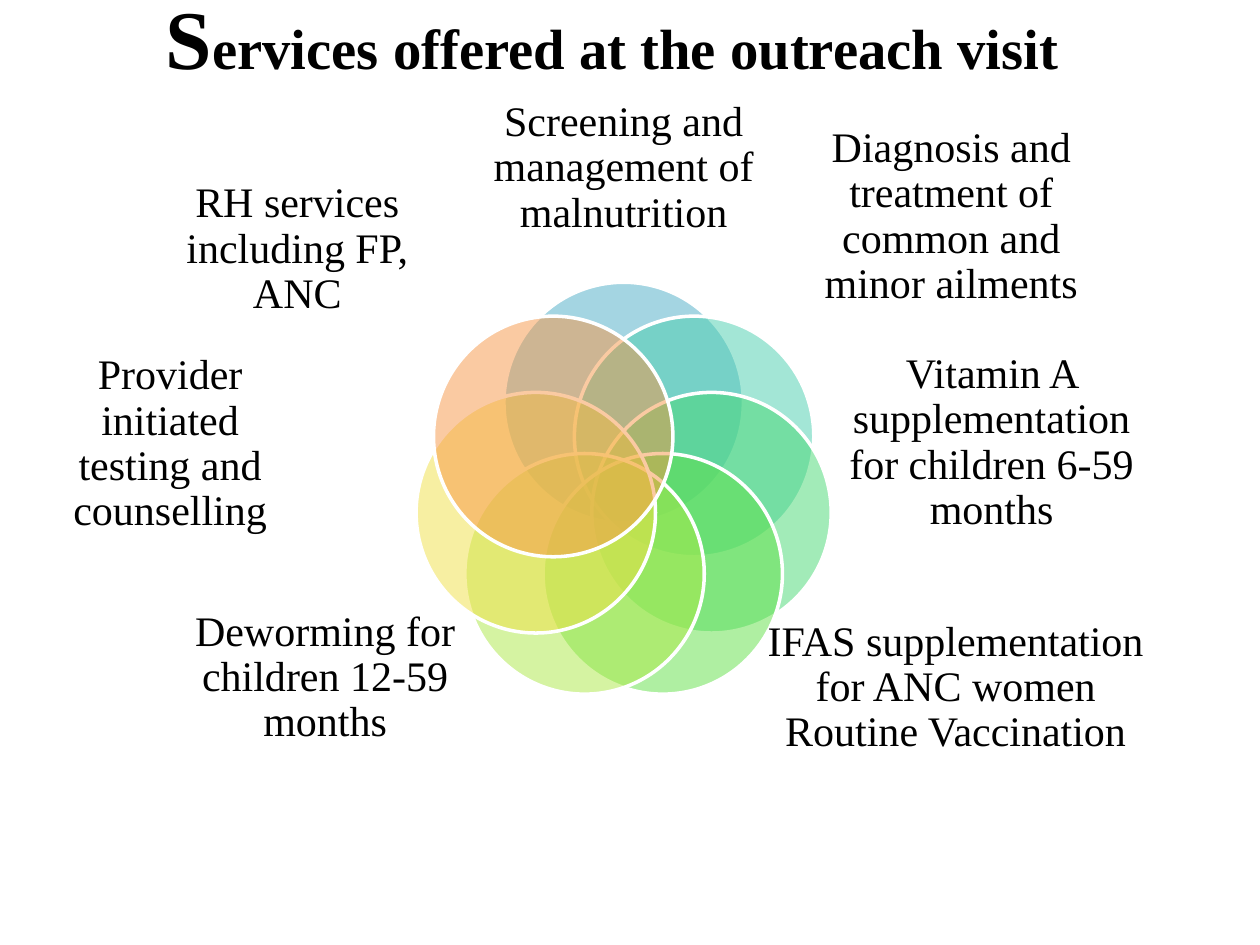
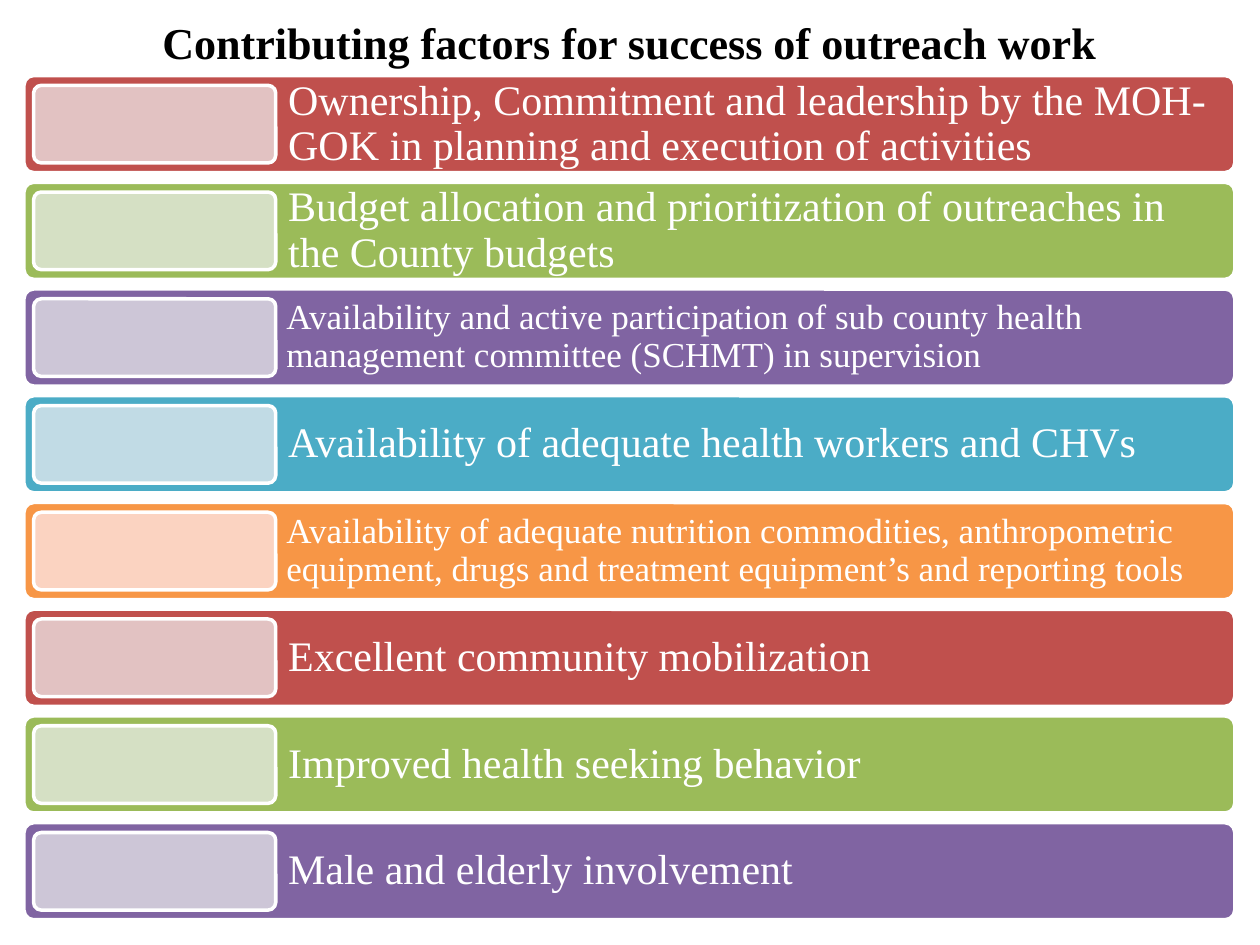
import math
from dataclasses import dataclass
from itertools import cycle

from lxml import etree
from pptx import Presentation
from pptx import util as u
from pptx.dml.color import RGBColor
from pptx.enum import shapes, text
from pptx.oxml.ns import qn


@dataclass(frozen=True)
class Theme:
    font: str = "Times New Roman"
    ink: str = "000000"
    paper: str = "FFFFFF"
    initial: float = 47.7
    heading: float = 32.4
    subheading: float = 25.2
    body: float = 24
    small: float = 20
    outline: float = 2
    opacity: int = 50
    bands: tuple = (
        ("C0504D", "E2C2C2"),
        ("9BBB59", "D5E0C4"),
        ("8064A2", "CDC6D7"),
        ("4BACC6", "C1DBE5"),
        ("F79646", "FBD3C1"),
    )


THEME = Theme()
WIDTH, HEIGHT = 10, 7.5

SERVICES_TITLE = [("S", THEME.initial), ("ervices offered at the outreach visit", THEME.heading)]
SERVICES = [
    ("Screening and management of malnutrition", "4BACC6", (3.86, 0.75, 2.18, 1.17)),
    ("Diagnosis and treatment of common and minor ailments", "49CFAE", (6.52, 1.08, 2.06, 1.28)),
    ("Vitamin A supplementation for children 6-59 months", "47D872", (6.57, 2.83, 2.6, 1.37)),
    ("IFAS supplementation for ANC women\nRoutine Vaccination", "60E146", (5.98, 4.83, 3.21, 1.26)),
    ("Deworming for children 12-59 months", "ACE946", (1.49, 4.75, 2.18, 1.26)),
    ("Provider initiated testing and counselling", "F0E146", (0.34, 2.84, 2.02, 1.37)),
    ("RH services including FP, ANC", "F79646", (1.33, 1.34, 2.06, 1.28)),
]

FACTORS_TITLE = [("Contributing factors for success of outreach work", THEME.subheading)]
FACTORS = [
    ("Ownership, Commitment and leadership by the MOH-GOK in planning and execution of activities", THEME.body),
    ("Budget allocation and prioritization of outreaches in the County budgets", THEME.body),
    ("Availability and active participation of sub county health management committee (SCHMT) in supervision",
     THEME.small),
    ("Availability of adequate health workers and CHVs", THEME.body),
    ("Availability of adequate nutrition commodities, anthropometric equipment, drugs and treatment "
     "equipment’s and reporting tools", THEME.small),
    ("Excellent community mobilization", THEME.body),
    ("Improved health seeking behavior", THEME.body),
    ("Male and elderly involvement", THEME.body),
]


def inches(place):
    return [u.Inches(length) for length in place]


def add_text(page, spans, place, color=THEME.ink, bold=False,
             align=text.PP_ALIGN.CENTER, spacing=0.9, inset=0):
    box = page.shapes.add_textbox(*inches(place))
    frame = box.text_frame
    frame.word_wrap = True
    frame.vertical_anchor = text.MSO_ANCHOR.MIDDLE
    frame.margin_left = frame.margin_right = u.Inches(inset)
    frame.margin_top = frame.margin_bottom = 0
    para = frame.paragraphs[0]
    para.alignment = align
    para.line_spacing = spacing
    for words, size in spans:
        for number, line in enumerate(words.split("\n")):
            if number:
                para.add_line_break()
            span = para.add_run()
            span.text = line
            span.font.name = THEME.font
            span.font.size = u.Pt(size)
            span.font.bold = bold
            span.font.color.rgb = RGBColor.from_string(color)


def add_panel(page, kind, place, fill, opacity=100):
    panel = page.shapes.add_shape(kind, *inches(place))
    panel.shadow.inherit = False
    panel.fill.solid()
    panel.fill.fore_color.rgb = RGBColor.from_string(fill)
    panel.line.color.rgb = RGBColor.from_string(THEME.paper)
    panel.line.width = u.Pt(THEME.outline)
    if opacity < 100:
        color = panel.fill._xPr.find(qn("a:solidFill"))[0]
        etree.SubElement(color, qn("a:alpha")).set("val", str(opacity * 1000))
    return panel


def add_page(deck, title, place):
    page = deck.slides.add_slide(deck.slide_layouts[6])
    add_text(page, title, place, bold=True, spacing=1)
    return page


def add_services(deck):
    page = add_page(deck, SERVICES_TITLE, (0.37, 0.04, 8.98, 0.5))
    center_x, center_y, ring = 4.95, 3.91, 0.715
    wide, high = 1.9, 1.91
    for index, (label, fill, label_place) in enumerate(SERVICES):
        angle = math.tau * index / len(SERVICES)
        left = center_x + ring * math.sin(angle) - wide / 2
        top = center_y - ring * math.cos(angle) - high / 2
        add_panel(page, shapes.MSO_SHAPE.OVAL, (left, top, wide, high), fill, THEME.opacity)
        add_text(page, [(label, THEME.body)], label_place)


def add_factors(deck):
    left, top = 0.19, 0.6
    wide = WIDTH - 2 * left - 0.01
    page = add_page(deck, FACTORS_TITLE, (left, 0.08, wide, 0.5))
    gap_share = 0.1
    rows = len(FACTORS)
    high = (HEIGHT - 0.2 - top) / (rows + gap_share * (rows - 1))
    gap = high * gap_share
    tile_wide = wide / 5
    text_left = left + gap + tile_wide
    rounded = shapes.MSO_SHAPE.ROUNDED_RECTANGLE
    for index, ((label, size), (band, tile)) in enumerate(zip(FACTORS, cycle(THEME.bands))):
        y = top + index * (high + gap)
        for place, fill in (
            ((left, y, wide, high), band),
            ((left + gap, y + gap, tile_wide, high - 2 * gap), tile),
        ):
            add_panel(page, rounded, place, fill).adjustments[0] = 0.1
        add_text(page, [(label, size)], (text_left, y, left + wide - text_left, high),
                 color=THEME.paper, align=text.PP_ALIGN.LEFT, inset=size / 240)


def main():
    deck = Presentation()
    deck.slide_width, deck.slide_height = inches((WIDTH, HEIGHT))
    add_services(deck)
    add_factors(deck)
    deck.save("out.pptx")


if __name__ == "__main__":
    main()
